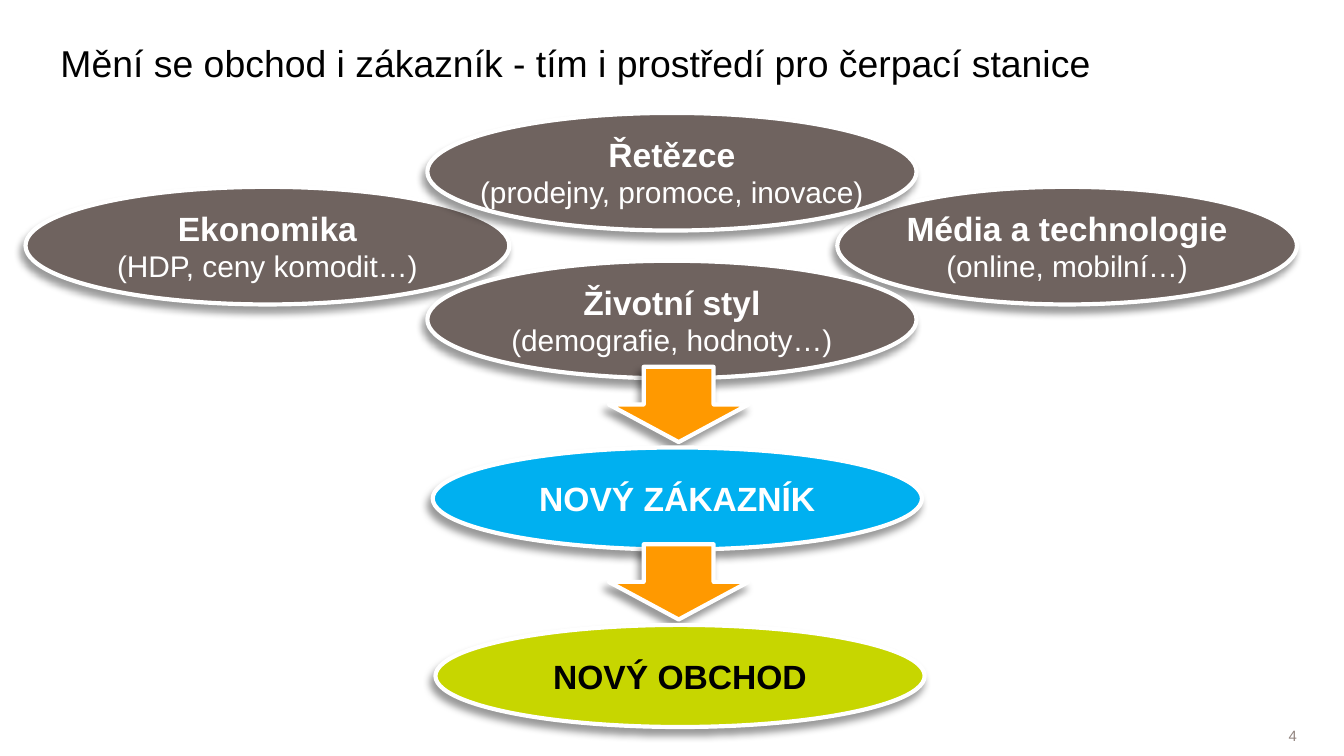
from lxml.etree import SubElement
from pptx import Presentation
from pptx.dml.color import RGBColor
from pptx.enum.shapes import MSO_SHAPE
from pptx.enum.text import MSO_ANCHOR, PP_ALIGN
from pptx.oxml.ns import qn
from pptx.util import Pt

PX = 4572
COLORS = {"brown": "6F635F", "blue": "00B0F0", "lime": "C7D600", "orange": "FF9900",
          "white": "FFFFFF", "black": "000000", "gray": "928580"}


def rgb(name):
    """Look up a named colour."""
    return RGBColor.from_string(COLORS[name])


def emu(box):
    """Turn a px box into EMU lengths."""
    return [n * PX for n in box]


def write(frame, *lines, sizes=(18, 16), color="white", bold=True,
          align=PP_ALIGN.CENTER, inset=0, wrap=False, soft=False):
    """Write lines as paragraphs, or with soft breaks; only the first may be bold."""
    frame.word_wrap = wrap
    frame.vertical_anchor = MSO_ANCHOR.MIDDLE
    frame.margin_left = frame.margin_right = inset * PX
    frame.margin_top = frame.margin_bottom = inset * PX // 2
    para = frame.paragraphs[0]
    for i, line in enumerate(lines):
        if i and soft:
            para.add_line_break()
        elif i:
            para = frame.add_paragraph()
        para.alignment = align
        para.space_before = Pt(0)
        run = para.add_run()
        run.text = line
        font = run.font
        font.name, font.size, font.bold = "Arial", Pt(sizes[i]), bold and i == 0
        font.color.rgb = rgb(color)


def shade(shape):
    """Give a shape a soft drop shadow."""
    shape.shadow.inherit = False
    effects = shape._element.spPr.find(qn("a:effectLst"))
    drop = SubElement(effects, qn("a:outerShdw"), blurRad=str(Pt(4)), dist=str(Pt(4)),
                      dir=str(120 * 60000), algn="ctr", rotWithShape="0")
    tint = SubElement(drop, qn("a:srgbClr"), val=COLORS["black"])
    SubElement(tint, qn("a:alpha"), val="40000")


def draw(slide, kind, box, fill):
    """Draw a filled shape with white outline and shadow."""
    shape = slide.shapes.add_shape(kind, *emu(box))
    shape.fill.solid()
    shape.fill.fore_color.rgb = rgb(fill)
    shape.line.color.rgb = rgb("white")
    shape.line.width = Pt(2.25)
    shade(shape)
    return shape


def oval(slide, box, *lines, fill="brown", **style):
    """Draw a labelled ellipse."""
    shape = draw(slide, MSO_SHAPE.OVAL, box, fill)
    write(shape.text_frame, *lines, **style)


def head(slide, box):
    """Place the slide title."""
    title = slide.shapes.title
    title.left, title.top, title.width, title.height = emu(box)
    write(title.text_frame, "Mění se obchod i zákazník - tím i prostředí pro čerpací stanice",
          sizes=[20], color="black", bold=False, align=PP_ALIGN.LEFT, inset=20, wrap=True)


def page(slide, box):
    """Place the page number."""
    text = slide.shapes.add_textbox(*emu(box))
    write(text.text_frame, "4", sizes=[8], color="gray", bold=False,
          align=PP_ALIGN.RIGHT, wrap=True)


def trends(slide, box):
    """Draw the four overlapping market trends."""
    x, y, w, h = box
    tall, mid, wide = 175, x + 598, 728
    side = y + (h - tall) // 2
    oval(slide, (x + w - 684, side, 684, tall), "Média a technologie", "(online, mobilní…)",
         soft=True)
    oval(slide, (x, side, 720, tall), "Ekonomika", "(HDP, ceny komodit…)")
    oval(slide, (mid, y + h - tall, wide, tall), "Životní styl", "(demografie, hodnoty…)")
    oval(slide, (mid, y, wide, tall), "Řetězce", "(prodejny, promoce, inovace)")


def results(slide, box):
    """Draw the chain of arrows and outcomes."""
    x, y, w, h = box
    step = h // 2
    steps = [("NOVÝ ZÁKAZNÍK", "blue", "white"), ("NOVÝ OBCHOD", "lime", "black")]
    for i, (label, fill, color) in enumerate(steps):
        top = y + i * step
        draw(slide, MSO_SHAPE.DOWN_ARROW, (x + 262, top, 208, 112), "orange")
        oval(slide, (x + 4 * i, top + 120, w, 152), label, fill=fill, color=color)


def main():
    """Build and save the deck."""
    deck = Presentation()
    deck.slide_width, deck.slide_height = emu((2000, 1125))
    slide = deck.slides.add_slide(deck.slide_layouts[5])
    page(slide, (1646, 1082, 284, 24))
    head(slide, (70, 49, 1686, 88))
    trends(slide, (38, 168, 1892, 395))
    results(slide, (644, 546, 728, 528))
    deck.save("out.pptx")


if __name__ == "__main__":
    main()
